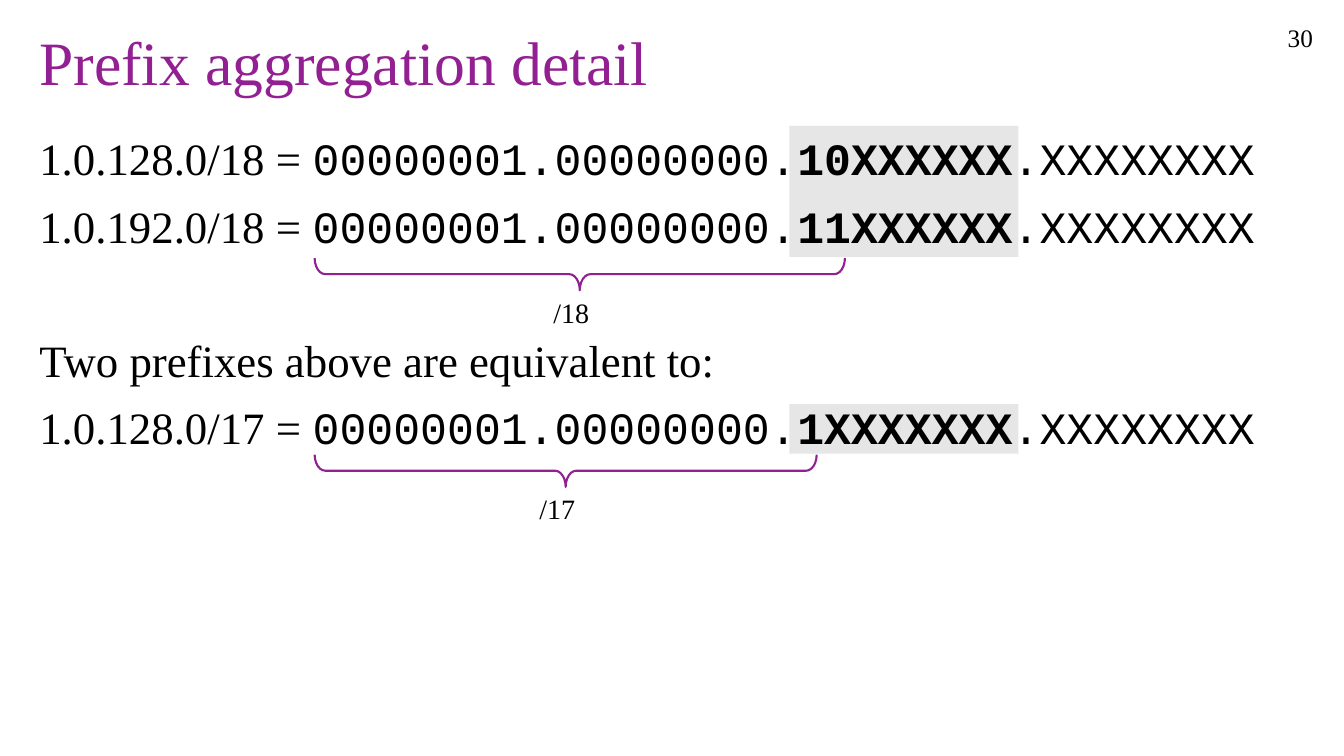
from pptx import Presentation
from pptx.dml.color import RGBColor
from pptx.enum.shapes import MSO_SHAPE
from pptx.enum.text import MSO_ANCHOR, MSO_AUTO_SIZE, PP_ALIGN
from pptx.oxml.ns import qn
from pptx.util import Emu, Pt
from lxml.etree import SubElement

SERIF, MONO = "Times New Roman", "Courier New"
PURPLE, BLACK, GRAY = "932092", "000000", "E7E6E6"

ADDRESS_ROWS = [
    ("1.0.128.0/18 = ", "10XXXXXX"),
    ("1.0.192.0/18 = ", "11XXXXXX"),
    ("1.0.128.0/17 = ", "1XXXXXXX"),
]
# Box of the highlighted octet, width of the brace below it, prefix length
PREFIX_GROUPS = [
    ((783, 125, 227, 130), 526, "/18"),
    ((783, 401, 227, 49), 498, "/17"),
]
BRACE_LEFT, BRACE_HEIGHT = 312, 32


def px(length):
    """Turn px (100 to the inch) into EMU."""
    return Emu(round(length * 9144))


def color(hex_string):
    return RGBColor.from_string(hex_string)


def add_run(paragraph, text, size, font=SERIF, hex_string=BLACK, bold=False):
    run = paragraph.add_run()
    run.text = text
    run.font.name = font
    run.font.size = Pt(size)
    run.font.bold = bold
    run.font.color.rgb = color(hex_string)


def place(shape, box):
    shape.left, shape.top, shape.width, shape.height = map(px, box)


def add_label(slide, box, text, size, alignment=PP_ALIGN.LEFT):
    label = slide.shapes.add_textbox(*map(px, box))
    label.text_frame.word_wrap = True
    paragraph = label.text_frame.paragraphs[0]
    paragraph.alignment = alignment
    add_run(paragraph, text, size)


def add_highlight(slide, box):
    highlight = slide.shapes.add_shape(MSO_SHAPE.RECTANGLE, *map(px, box))
    highlight.shadow.inherit = False
    highlight.fill.solid()
    highlight.fill.fore_color.rgb = color(GRAY)
    highlight.line.fill.background()


def add_brace(slide, box):
    """Place a brace that opens upward and fills the box."""
    left, top, width, height = box
    center_x, center_y = left + width / 2, top + height / 2
    upright_box = (center_x - height / 2, center_y - width / 2, height, width)
    brace = slide.shapes.add_shape(MSO_SHAPE.RIGHT_BRACE, *map(px, upright_box))
    brace.rotation = 90
    brace.adjustments[0] = 0.33
    brace.shadow.inherit = False
    brace.fill.background()
    brace.line.color.rgb = color(PURPLE)
    brace.line.width = Pt(1.5)


def add_prefix_mark(slide, highlight_box, brace_width, prefix_length):
    """Put a brace and its label under a highlighted octet."""
    bottom = highlight_box[1] + highlight_box[3]
    add_brace(slide, (BRACE_LEFT, bottom + 1, brace_width, BRACE_HEIGHT))
    label_width = 72
    label_left = BRACE_LEFT + (brace_width - label_width) / 2
    add_label(slide, (label_left, bottom + 33, label_width, 44), prefix_length, 20)


def fill_title(title, box):
    place(title, box)
    frame = title.text_frame
    frame.auto_size = MSO_AUTO_SIZE.NONE
    frame.vertical_anchor = MSO_ANCHOR.MIDDLE
    paragraph = frame.paragraphs[0]
    paragraph.alignment = PP_ALIGN.LEFT
    paragraph.line_spacing = 0.9
    add_run(paragraph, "Prefix aggregation detail", 44, hex_string=PURPLE)


def add_body_paragraph(frame, space_before=10):
    paragraph = frame.paragraphs[0]
    if paragraph.runs:
        paragraph = frame.add_paragraph()
    paragraph.space_before = Pt(space_before)
    paragraph.line_spacing = 1.0
    properties = paragraph._p.get_or_add_pPr()
    properties.set("marL", "0")
    properties.set("indent", "0")
    SubElement(properties, qn("a:buNone"))
    return paragraph


def add_address(frame, address, octet):
    paragraph = add_body_paragraph(frame)
    add_run(paragraph, address, 32)
    add_run(paragraph, "00000001.00000000.", 32, MONO)
    add_run(paragraph, octet, 32, MONO, bold=True)
    add_run(paragraph, ".XXXXXXXX", 32, MONO)


def fill_body(body, box):
    place(body, box)
    frame = body.text_frame
    frame.auto_size = MSO_AUTO_SIZE.NONE
    for row in ADDRESS_ROWS[:2]:
        add_address(frame, *row)
    paragraph = add_body_paragraph(frame, space_before=57)
    add_run(paragraph, "Two prefixes above are equivalent to:", 32)
    add_address(frame, *ADDRESS_ROWS[2])


def build_slide(presentation):
    slide = presentation.slides.add_slide(presentation.slide_layouts[1])
    title, body = slide.placeholders
    add_label(slide, (1246, 17, 66, 40), "30", 18, PP_ALIGN.RIGHT)
    for highlight_box, _, _ in PREFIX_GROUPS:
        add_highlight(slide, highlight_box)

    # Text goes in front of the highlights
    for placeholder in (title, body):
        placeholder.element.getparent().append(placeholder.element)
    fill_title(title, (29, 17, 1273, 97))
    fill_body(body, (29, 125, 1273, 612))

    for group in PREFIX_GROUPS:
        add_prefix_mark(slide, *group)


def main():
    presentation = Presentation()
    presentation.slide_width, presentation.slide_height = px(1333), px(750)
    build_slide(presentation)
    presentation.save("out.pptx")


if __name__ == "__main__":
    main()
